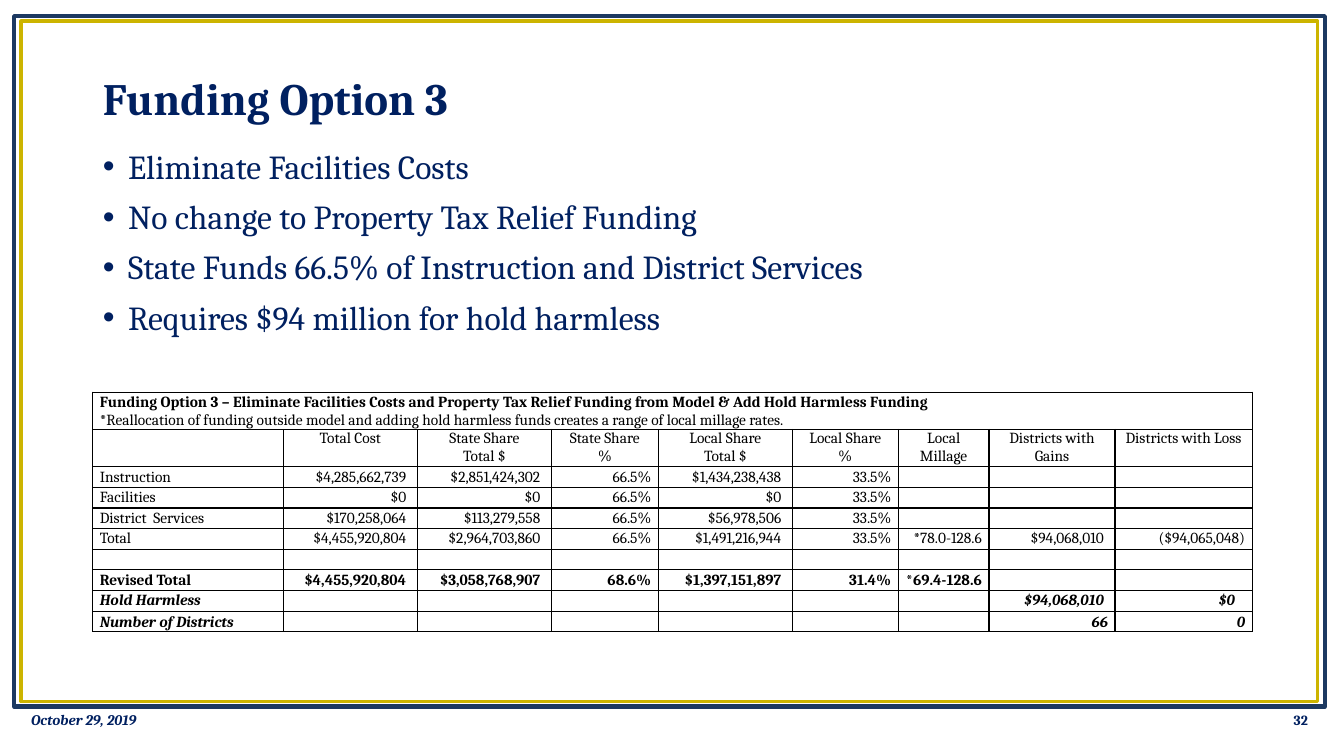
from dataclasses import dataclass

from lxml.etree import SubElement
from pptx import Presentation
from pptx.dml.color import RGBColor
from pptx.enum.shapes import MSO_SHAPE
from pptx.enum.text import MSO_ANCHOR, MSO_AUTO_SIZE, PP_ALIGN
from pptx.oxml.ns import qn
from pptx.util import Inches, Pt

FONT = "Cambria"
COLORS = {"navy": "002060", "frame": "1C3961", "gold": "CCB400", "black": "000000"}


@dataclass
class Frame:
    left: float
    top: float
    width: float
    height: float
    color: str
    weight: float


@dataclass
class Footer:
    text: str
    left: float
    size: float
    align: PP_ALIGN
    italic: bool


@dataclass
class TableRow:
    label: str
    values: list[str]
    bold: bool = False
    italic: bool = False
    anchor: MSO_ANCHOR = MSO_ANCHOR.MIDDLE


FRAMES = [
    Frame(0.14, 0.16, 13, 6.85, "frame", 3),
    Frame(0.21, 0.21, 12.86, 6.75, "gold", 2.5),
]
FOOTERS = [
    Footer("32", 10.07, 10, PP_ALIGN.RIGHT, False),
    Footer("October 29, 2019", 0.21, 10.5, PP_ALIGN.LEFT, True),
]
BULLETS = [
    "Eliminate Facilities Costs",
    "No change to Property Tax Relief Funding",
    "State Funds 66.5% of Instruction and District Services",
    "Requires $94 million for hold harmless",
]
CAPTION = "Funding Option 3 – Eliminate Facilities Costs and Property Tax Relief Funding\u00a0from Model & Add Hold Harmless Funding"
CAPTION_NOTE = "*Reallocation of funding outside model and adding hold harmless funds creates a range of local millage rates."
HEADERS = [
    [], ["Total Cost"], ["State Share", "Total $"], ["State Share", "%"],
    ["Local Share", "Total $"], ["Local Share", "%"], ["Local Millage"],
    ["Districts with Gains"], ["Districts with Loss"],
]
ROWS = [
    TableRow("Instruction", ["$4,285,662,739", "$2,851,424,302", "66.5%", "$1,434,238,438", "33.5%", "", "", ""]),
    TableRow("Facilities", ["$0", "$0", "66.5%", "$0", "33.5%", "", "", ""]),
    TableRow("District  Services", ["$170,258,064", "$113,279,558", "66.5%", "$56,978,506", "33.5%", "", "", ""]),
    TableRow("Total", ["$4,455,920,804", "$2,964,703,860", "66.5%", "$1,491,216,944", "33.5%",
                       "*78.0-128.6", "$94,068,010", "($94,065,048)"]),
    TableRow("", [""] * 8),
    TableRow("Revised Total", ["$4,455,920,804", "$3,058,768,907", "68.6%", "$1,397,151,897", "31.4%",
                               "*69.4-128.6", "", ""], bold=True),
    TableRow("Hold Harmless", [""] * 6 + ["$94,068,010", "$0"], bold=True, italic=True),
    TableRow("Number of Districts", [""] * 6 + ["66", "0"], bold=True, italic=True, anchor=MSO_ANCHOR.BOTTOM),
]
COLUMN_WIDTHS = [1.89, 1.33, 1.33, 1.06, 1.33, 1.05, 0.9, 1.25, 1.36]
TALL_ROW, DATA_ROW = 0.37, 0.205
CELL_MARGIN, MONEY_MARGIN, LOSS_MARGIN = 0.07, 0.11, 0.17


def rgb(name: str) -> RGBColor:
    return RGBColor.from_string(COLORS[name])


def place(shape, left: float, top: float, width: float, height: float) -> None:
    shape.left, shape.top = Inches(left), Inches(top)
    shape.width, shape.height = Inches(width), Inches(height)


def add_run(paragraph, text: str, size: float, color: str = "navy", bold: bool = False, italic: bool = False) -> None:
    run = paragraph.add_run()
    run.text = text
    font = run.font
    font.name, font.size, font.bold, font.italic = FONT, Pt(size), bold, italic
    font.color.rgb = rgb(color)


def next_paragraph(text_frame, index: int):
    return text_frame.add_paragraph() if index else text_frame.paragraphs[0]


def add_frame(slide, frame: Frame, depth: int) -> None:
    """Draw an outline behind the placeholders, at the given place in the stack."""
    shape = slide.shapes.add_shape(
        MSO_SHAPE.RECTANGLE, Inches(frame.left), Inches(frame.top), Inches(frame.width), Inches(frame.height))
    shape.shadow.inherit = False
    shape.fill.background()
    shape.line.color.rgb = rgb(frame.color)
    shape.line.width = Pt(frame.weight)
    slide.shapes._spTree.insert(2 + depth, shape._element)


def fill_title(slide) -> None:
    title = slide.shapes.title
    place(title, 0.92, 0.32, 11.5, 1.36)
    title.text_frame.auto_size = MSO_AUTO_SIZE.NONE
    title.text_frame.vertical_anchor = MSO_ANCHOR.MIDDLE
    paragraph = title.text_frame.paragraphs[0]
    paragraph.alignment = PP_ALIGN.LEFT
    paragraph.line_spacing = 0.9
    add_run(paragraph, "Funding Option 3", 32, bold=True)


def fill_bullets(slide) -> None:
    body = slide.placeholders[1]
    place(body, 0.92, 1.44, 11.5, 5)
    body.text_frame.auto_size = MSO_AUTO_SIZE.NONE
    for index, text in enumerate(BULLETS):
        paragraph = next_paragraph(body.text_frame, index)
        paragraph.line_spacing = 0.9
        paragraph.space_before = Pt(10 if index else 0)
        properties = paragraph._p.get_or_add_pPr()
        properties.set("marL", str(Inches(0.25)))
        properties.set("indent", str(Inches(-0.25)))
        SubElement(properties, qn("a:buFont"), typeface="Arial")
        SubElement(properties, qn("a:buChar"), char="•")
        add_run(paragraph, text, 24)


def add_footer(slide, footer: Footer) -> None:
    box = slide.shapes.add_textbox(Inches(footer.left), Inches(6.94), Inches(3), Inches(0.4))
    box.text_frame.word_wrap = True
    box.text_frame.vertical_anchor = MSO_ANCHOR.MIDDLE
    paragraph = box.text_frame.paragraphs[0]
    paragraph.alignment = footer.align
    add_run(paragraph, footer.text, footer.size, bold=True, italic=footer.italic)


def format_cell(cell) -> None:
    """Give a cell black borders, no fill, tight margins and a small empty line."""
    properties = cell._tc.get_or_add_tcPr()
    for side in ("lnL", "lnR", "lnT", "lnB"):
        line = SubElement(properties, qn(f"a:{side}"), w=str(Pt(1)))
        SubElement(SubElement(line, qn("a:solidFill")), qn("a:srgbClr"), val=COLORS["black"])
    cell.fill.background()
    cell.margin_left = cell.margin_right = Inches(CELL_MARGIN)
    cell.margin_top = cell.margin_bottom = 0
    SubElement(cell.text_frame.paragraphs[0]._p, qn("a:endParaRPr"), sz="1100")


def write_cell(cell, lines: list[str], align: PP_ALIGN, bold: bool = False, italic: bool = False) -> None:
    for index, text in enumerate(lines):
        paragraph = next_paragraph(cell.text_frame, index)
        paragraph.alignment = align
        add_run(paragraph, text, 11, "black", bold, italic)


def add_funding_table(slide) -> None:
    heights = [TALL_ROW] * 2 + [DATA_ROW] * len(ROWS)
    table = slide.shapes.add_table(
        len(heights), len(COLUMN_WIDTHS), Inches(0.92), Inches(3.89), Inches(11.5), Inches(sum(heights))).table
    table.first_row = table.horz_banding = False
    for column, width in zip(table.columns, COLUMN_WIDTHS):
        column.width = Inches(width)
    for row, height in zip(table.rows, heights):
        row.height = Inches(height)
    for cell in table.iter_cells():
        format_cell(cell)

    caption = table.cell(0, 0)
    caption.merge(table.cell(0, len(COLUMN_WIDTHS) - 1))
    caption.vertical_anchor = MSO_ANCHOR.BOTTOM
    add_run(caption.text_frame.paragraphs[0], CAPTION, 11, "black", bold=True)
    add_run(caption.text_frame.add_paragraph(), CAPTION_NOTE, 11, "black")
    for column, lines in enumerate(HEADERS):
        write_cell(table.cell(1, column), lines, PP_ALIGN.CENTER)

    for row_index, row in enumerate(ROWS, start=2):
        for column, text in enumerate([row.label, *row.values]):
            if not text:
                continue
            cell = table.cell(row_index, column)
            cell.vertical_anchor = row.anchor
            if text.startswith("$"):
                is_loss = column == len(COLUMN_WIDTHS) - 1
                cell.margin_right = Inches(LOSS_MARGIN if is_loss else MONEY_MARGIN)
            write_cell(cell, [text], PP_ALIGN.RIGHT if column else PP_ALIGN.LEFT, row.bold, row.italic)


def main() -> None:
    presentation = Presentation()
    presentation.slide_width, presentation.slide_height = Inches(13.33), Inches(7.5)
    slide = presentation.slides.add_slide(presentation.slide_layouts[1])
    for depth, frame in enumerate(FRAMES):
        add_frame(slide, frame, depth)
    fill_title(slide)
    fill_bullets(slide)
    add_funding_table(slide)
    for footer in FOOTERS:
        add_footer(slide, footer)
    presentation.save("out.pptx")


if __name__ == "__main__":
    main()
